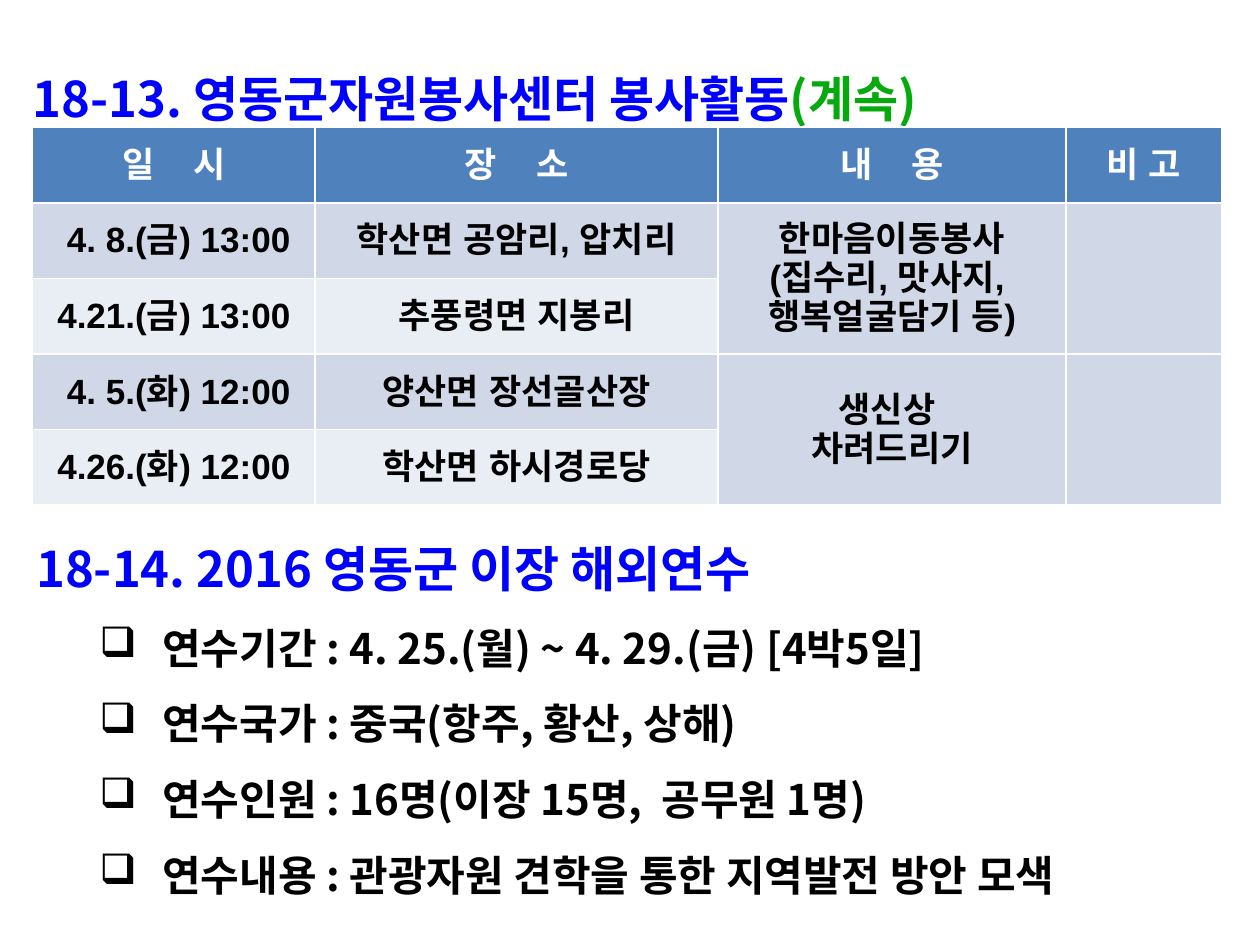
from lxml.etree import SubElement
from pptx import Presentation
from pptx.dml.color import RGBColor
from pptx.enum.text import MSO_ANCHOR as Anchor, MSO_AUTO_SIZE as AutoSize, PP_ALIGN as Align
from pptx.oxml.ns import qn
from pptx.util import Inches, Pt

HEADING_FONT, TABLE_FONT = "Noto Sans CJK KR", "Arial"
BLUE, GREEN, BLACK, WHITE = "0000FF", "05AB0D", "000000", "FFFFFF"
HEADER_FILL, BAND_FILLS = "4F81BD", ("D0D8E8", "E9EDF4")

COLUMN_WIDTHS = (2.24, 3.2, 2.76, 1.24)
ROW_HEIGHT = 0.6
SCHEDULE = (
    ("일    시", "장    소", "내    용", "비 고"),
    (" 4. 8.(금) 13:00", "학산면 공암리, 압치리",
     "한마음이동봉사\n(집수리, 맛사지, \n행복얼굴담기 등)", ""),
    ("4.21.(금) 13:00", "추풍령면 지봉리", "", ""),
    (" 4. 5.(화) 12:00", "양산면 장선골산장", "생신상 \n차려드리기", ""),
    ("4.26.(화) 12:00", "학산면 하시경로당", "", ""),
)
TRIP_DETAILS = (
    "연수기간 : 4. 25.(월) ~ 4. 29.(금) [4박5일]",
    "연수국가 : 중국(항주, 황산, 상해)",
    "연수인원 : 16명(이장 15명,  공무원 1명)",
    "연수내용 : 관광자원 견학을 통한 지역발전 방안 모색",
)


def color(value):
    return RGBColor.from_string(value)


def add_run(paragraph, text, size, fill, font_name=HEADING_FONT):
    run = paragraph.add_run()
    run.text = text
    font = run.font
    font.name, font.size, font.bold = font_name, Pt(size), True
    font.color.rgb = color(fill)
    # Korean letters take the East Asian typeface
    SubElement(font._element, qn("a:ea"), typeface=font_name)


def format_frame(frame):
    frame.auto_size = AutoSize.NONE
    frame.word_wrap = True
    frame.vertical_anchor = Anchor.TOP


def format_line(paragraph):
    paragraph.alignment = Align.LEFT
    paragraph.line_spacing = 1.5
    paragraph.space_before = Pt(0)


def add_bullet(paragraph, character):
    properties = paragraph._p.get_or_add_pPr()
    properties.set("marL", str(Inches(1)))
    properties.set("indent", str(Inches(-0.5)))
    bullet_color = SubElement(properties, qn("a:buClr"))
    SubElement(bullet_color, qn("a:srgbClr"), val=BLACK)
    SubElement(properties, qn("a:buChar"), char=character)


def fill_title(title):
    title.left, title.top = Inches(0.16), Inches(0.26)
    title.width, title.height = Inches(9.38), Inches(3.25)
    format_frame(title.text_frame)
    paragraph = title.text_frame.paragraphs[0]
    format_line(paragraph)
    add_run(paragraph, "18-13. 영동군자원봉사센터 봉사활동", 28, BLUE)
    add_run(paragraph, "(계속)", 28, GREEN)


def fill_cell(cell, text, text_color, background):
    cell.fill.solid()
    cell.fill.fore_color.rgb = color(background)
    cell.vertical_anchor = Anchor.MIDDLE
    if not text:
        return
    frame = cell.text_frame
    for index, line in enumerate(text.split("\n")):
        paragraph = frame.add_paragraph() if index else frame.paragraphs[0]
        paragraph.alignment = Align.CENTER
        add_run(paragraph, line, 20, text_color, TABLE_FONT)


def add_schedule(slide):
    row_count = len(SCHEDULE)
    table = slide.shapes.add_table(
        row_count, len(COLUMN_WIDTHS), Inches(0.26), Inches(1.01),
        Inches(sum(COLUMN_WIDTHS)), Inches(ROW_HEIGHT * row_count)).table
    for column, width in zip(table.columns, COLUMN_WIDTHS):
        column.width = Inches(width)
    for row_index, texts in enumerate(SCHEDULE):
        table.rows[row_index].height = Inches(ROW_HEIGHT)
        is_header = row_index == 0
        background = HEADER_FILL if is_header else BAND_FILLS[(row_index - 1) % 2]
        for column_index, text in enumerate(texts):
            fill_cell(table.cell(row_index, column_index), text,
                      WHITE if is_header else BLACK, background)
    # Activity and remarks each cover a pair of dates
    for first_row in (1, 3):
        for column_index in (2, 3):
            table.cell(first_row, column_index).merge(
                table.cell(first_row + 1, column_index))


def add_trip(slide):
    frame = slide.shapes.add_textbox(
        Inches(0.19), Inches(3.99), Inches(9.14), Inches(3.13)).text_frame
    format_frame(frame)
    heading = frame.paragraphs[0]
    format_line(heading)
    add_run(heading, "18-14. 2016 영동군 이장 해외연수", 28, BLUE)
    for detail in TRIP_DETAILS:
        paragraph = frame.add_paragraph()
        paragraph.level = 1
        format_line(paragraph)
        add_bullet(paragraph, "❑")
        add_run(paragraph, detail, 24, BLACK)


def main():
    presentation = Presentation()
    presentation.slide_width, presentation.slide_height = Inches(10), Inches(7.5)
    slide = presentation.slides.add_slide(presentation.slide_layouts[5])
    fill_title(slide.shapes.title)
    add_schedule(slide)
    add_trip(slide)
    presentation.save("out.pptx")


if __name__ == "__main__":
    main()
